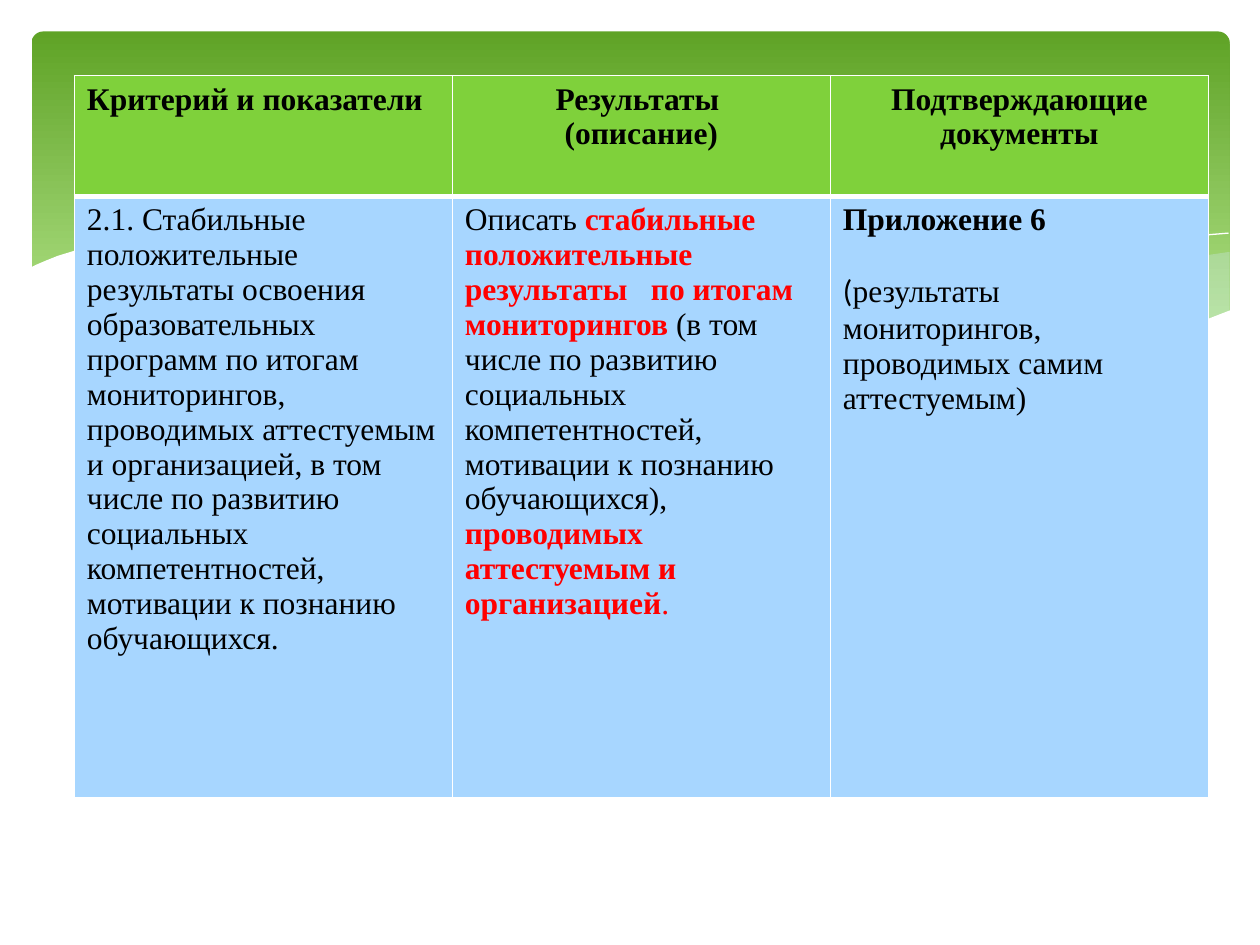
from lxml import etree
from pptx import Presentation
from pptx.dml.color import RGBColor
from pptx.enum.shapes import MSO_SHAPE
from pptx.enum.text import PP_ALIGN
from pptx.oxml.ns import qn
from pptx.util import Inches, Pt

ROUNDED = MSO_SHAPE.ROUNDED_RECTANGLE
CENTER, LEFT = PP_ALIGN.CENTER, PP_ALIGN.LEFT
SERIF, SANS = "Times New Roman", "Calibri"
BLACK, RED, WHITE = "000000", "FF0000", "FFFFFF"
GREEN, BLUE, PALE = "7FD13B", "A7D6FF", "D6ECFF"

# Waves of the header band: points in inches
RIGHT_WAVE = [
    (9.75, 2), (9.48, 2.04), (9.21, 2.1), (8.91, 2.16), (8.61, 2.23), (8.05, 2.37),
    (7.53, 2.48), (7.06, 2.57), (6.61, 2.65), (6.91, 2.69), (7.32, 2.74), (7.69, 2.77),
    (8.03, 2.78), (8.35, 2.77), (8.63, 2.75), (8.89, 2.72), (9.13, 2.67), (9.35, 2.62),
    (9.49, 2.57), (9.76, 2.47), (9.76, 2)]
MIDDLE_WAVE = [
    (8.93, 2.73), (8.66, 2.69), (8.07, 2.6), (7.41, 2.47), (6.68, 2.31), (6.29, 2.22),
    (5.84, 2.11), (5.41, 2.03), (5.02, 1.96), (4.65, 1.91), (4.2, 1.87), (3.8, 1.85),
    (3.44, 1.86), (3.13, 1.88), (2.86, 1.91), (3.23, 1.96), (3.62, 2.03), (4.04, 2.11),
    (4.49, 2.22), (5.3, 2.4), (5.84, 2.52), (6.34, 2.61), (6.8, 2.68), (7.22, 2.74),
    (7.61, 2.77), (7.96, 2.78), (8.28, 2.78), (8.57, 2.77), (8.84, 2.74)]
FALLING_LINE = [
    (3.09, 1.95), (3.28, 1.92), (3.53, 1.89), (3.87, 1.87), (4.33, 1.87), (4.89, 1.9),
    (5.33, 1.94), (5.82, 2), (6.36, 2.08), (6.95, 2.19), (7.6, 2.33), (8.31, 2.51),
    (9.07, 2.72)]
RISING_LINE = [
    (6.13, 2.57), (6.53, 2.46), (6.95, 2.35), (7.48, 2.23), (8.06, 2.1), (8.66, 1.99),
    (8.95, 1.94), (9.24, 1.9), (9.51, 1.87), (9.75, 1.85)]
WHITE_WAVE = [
    (9.77, 2.46), (9.59, 2.53), (9.4, 2.59), (9.1, 2.67), (8.75, 2.73), (8.37, 2.76),
    (8.09, 2.77), (7.61, 2.75), (7.08, 2.7), (6.48, 2.62), (5.79, 2.5), (5.03, 2.33),
    (4.47, 2.2), (3.91, 2.07), (3.4, 1.97), (2.92, 1.9), (2.5, 1.86), (2.11, 1.84),
    (1.77, 1.84), (1.46, 1.85), (1.19, 1.87), (0.95, 1.91), (0.76, 1.95), (0.59, 1.99),
    (0.46, 2.03), (0.36, 2.07), (0.29, 2.1), (0.23, 2.13), (0.23, 3.29), (9.77, 3.29)]

# Each cell is a list of paragraphs, each paragraph a list of (text, colour, bold, font)
HEADER = [
    [[("Критерий и показатели", BLACK, True, SERIF)]],
    [[("Результаты ", BLACK, True, SERIF)], [("(описание)", BLACK, True, SERIF)]],
    [[("Подтверждающие документы", BLACK, True, SERIF)]],
]
BODY = [
    [[("2.1. Стабильные положительные результаты освоения образовательных программ "
       "по итогам мониторингов, проводимых аттестуемым и организацией, в том числе "
       "по развитию социальных компетентностей, мотивации к познанию обучающихся.",
       BLACK, False, SERIF)]],
    [[("Описать ", BLACK, False, SERIF),
      ("стабильные положительные результаты   по итогам мониторингов ", RED, True, SERIF),
      ("(в том числе по развитию социальных компетентностей, мотивации к познанию "
       "обучающихся), ", BLACK, False, SERIF),
      ("проводимых аттестуемым и организацией", RED, True, SERIF),
      (".", RED, False, SERIF)]],
    [[("Приложение 6", BLACK, True, SERIF)],
     [("(", BLACK, False, SANS),
      ("результаты мониторингов, проводимых самим аттестуемым)", BLACK, False, SERIF)]],
]


def rgb(color):
    return RGBColor.from_string(color)


class Deck:
    def __init__(self, width, height, size=18):
        self.prs = Presentation()
        self.prs.slide_width, self.prs.slide_height = Inches(width), Inches(height)
        self.s = self.prs.slides.add_slide(self.prs.slide_layouts[6])
        self.size = Pt(size)

    def band(self, x, y, w, h, top, bottom):
        """Rounded panel with a vertical gradient."""
        sp = self.s.shapes.add_shape(ROUNDED, Inches(x), Inches(y), Inches(w), Inches(h))
        sp.adjustments[0] = 0.034
        sp.shadow.inherit = False
        sp.line.fill.background()
        sp.fill.gradient()
        sp.fill.gradient_angle = 270
        for stop, color, pos in zip(sp.fill.gradient_stops, (top, bottom), (0, 0.9)):
            stop.color.rgb = rgb(color)
            stop.position = pos

    def outline(self, points, closed):
        pts = [(Inches(x), Inches(y)) for x, y in points]
        builder = self.s.shapes.build_freeform(*pts[0], scale=1.0)
        builder.add_line_segments(pts[1:], close=closed)
        sp = builder.convert_to_shape()
        sp.shadow.inherit = False
        return sp

    def wave(self, points, color, opacity=100):
        sp = self.outline(points, True)
        sp.line.fill.background()
        sp.fill.solid()
        sp.fill.fore_color.rgb = rgb(color)
        if opacity < 100:
            clr = sp.fill._xPr.find(".//" + qn("a:srgbClr"))
            etree.SubElement(clr, qn("a:alpha"), val=str(opacity * 1000))

    def curve(self, points, color):
        sp = self.outline(points, False)
        sp.fill.background()
        sp.line.color.rgb = rgb(color)
        sp.line.width = Pt(0)

    def borders(self, cell, **widths):
        tcPr = cell._tc.get_or_add_tcPr()
        for side, width in widths.items():
            ln = etree.SubElement(tcPr, qn("a:ln" + side), w=str(Pt(width)))
            fill = etree.SubElement(ln, qn("a:solidFill"))
            etree.SubElement(fill, qn("a:srgbClr"), val=WHITE)

    def cell(self, cell, paragraphs, color, align, gap):
        cell.fill.solid()
        cell.fill.fore_color.rgb = rgb(color)
        tf = cell.text_frame
        for i, runs in enumerate(paragraphs):
            p = tf.add_paragraph() if i else tf.paragraphs[0]
            p.alignment = align
            p.space_before = Pt(gap if i else 0)
            for text, font_color, bold, font in runs:
                r = p.add_run()
                r.text = text
                r.font.name, r.font.size, r.font.bold = font, self.size, bold
                r.font.color.rgb = rgb(font_color)

    def table(self, x, y, col_width, heights, header, body):
        shape = self.s.shapes.add_table(2, len(header), Inches(x), Inches(y),
                                        Inches(col_width * len(header)), Inches(sum(heights)))
        table = shape.table
        table.first_row = table.horz_banding = False
        for row, height in zip(table.rows, heights):
            row.height = Inches(height)
        for i, column in enumerate(table.columns):
            column.width = Inches(col_width)
            top, bottom = table.cell(0, i), table.cell(1, i)
            self.borders(top, L=1, R=1, T=1, B=3)
            self.borders(bottom, L=1, R=1, T=3, B=1)
            self.cell(top, header[i], GREEN, CENTER if i else LEFT, 0)
            self.cell(bottom, body[i], BLUE, LEFT, 20)


def main():
    deck = Deck(10, 7.5)
    deck.band(0.25, 0.25, 9.51, 2.7, "5FA326", "B2E389")
    deck.wave(RIGHT_WAVE, PALE, 29)
    deck.wave(MIDDLE_WAVE, PALE, 40)
    deck.curve(FALLING_LINE, WHITE)
    deck.curve(RISING_LINE, WHITE)
    deck.wave(WHITE_WAVE, WHITE)
    deck.table(0.59, 0.6, 3, (0.96, 4.77), HEADER, BODY)
    deck.prs.save("out.pptx")


if __name__ == "__main__":
    main()
